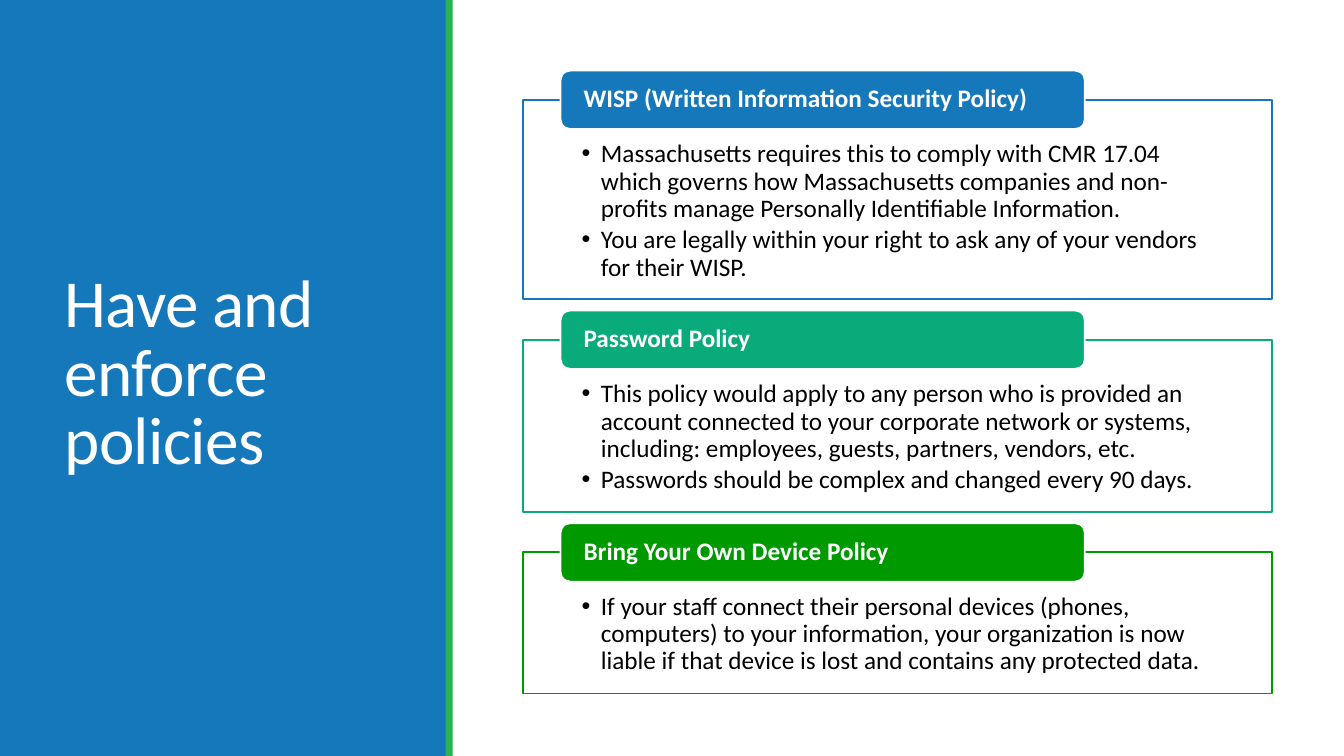
from dataclasses import dataclass

from lxml import etree
from pptx import Presentation
from pptx.dml.color import RGBColor
from pptx.enum.shapes import MSO_SHAPE
from pptx.enum.text import MSO_ANCHOR, MSO_AUTO_SIZE, PP_ALIGN
from pptx.oxml.ns import qn
from pptx.shapes.autoshape import Shape
from pptx.slide import Slide
from pptx.text.text import TextFrame
from pptx.util import Inches, Pt

RECTANGLE = MSO_SHAPE.RECTANGLE
ROUNDED = MSO_SHAPE.ROUNDED_RECTANGLE
TOP, MIDDLE = MSO_ANCHOR.TOP, MSO_ANCHOR.MIDDLE
LEFT = PP_ALIGN.LEFT
NO_AUTOFIT = MSO_AUTO_SIZE.NONE

BLUE = RGBColor(0x15, 0x78, 0xBB)
LIME = RGBColor(0x27, 0xB3, 0x50)
TEAL = RGBColor(0x09, 0xAB, 0x7B)
GREEN = RGBColor(0x00, 0x99, 0x00)
WHITE = RGBColor(0xFF, 0xFF, 0xFF)
BLACK = RGBColor(0x00, 0x00, 0x00)
FONT = "Calibri"

# Lengths in inches
SLIDE_WIDTH, SLIDE_HEIGHT = 13.33, 7.5
CARD_LEFT, CARD_WIDTH = 5.19, 7.43
FIRST_CARD_TOP, CARD_GAP = 0.99, 0.4
TAB_LEFT, TAB_WIDTH, TAB_HEIGHT = 5.56, 5.2, 0.58
BULLET_INDENT = 0.19


@dataclass(frozen=True)
class Policy:
    name: str
    color: RGBColor
    height: float
    points: tuple[str, ...]


POLICIES = (
    Policy("WISP (Written Information Security Policy)", BLUE, 1.98, (
        "Massachusetts requires this to comply with CMR 17.04 which governs how "
        "Massachusetts companies and non-profits manage Personally Identifiable "
        "Information.",
        "You are legally within your right to ask any of your vendors for their WISP.",
    )),
    Policy("Password Policy", TEAL, 1.71, (
        "This policy would apply to any person who is provided an account connected "
        "to your corporate network or systems, including: employees, guests, "
        "partners, vendors, etc.",
        "Passwords should be complex and changed every 90 days.",
    )),
    Policy("Bring Your Own Device Policy", GREEN, 1.4, (
        "If your staff connect their personal devices (phones, computers) to your "
        "information, your organization is now liable if that device is lost and "
        "contains any protected data.",
    )),
)


def add_box(page: Slide, kind: MSO_SHAPE, left: float, top: float, width: float,
            height: float, fill: RGBColor, line: RGBColor | None = None) -> Shape:
    box = page.shapes.add_shape(
        kind, Inches(left), Inches(top), Inches(width), Inches(height))
    box.shadow.inherit = False
    box.fill.solid()
    box.fill.fore_color.rgb = fill
    if line is None:
        box.line.fill.background()
    else:
        box.line.color.rgb = line
        box.line.width = Pt(1.25)
    return box


def set_frame(frame: TextFrame, anchor: MSO_ANCHOR, side: float,
              top: float, bottom: float) -> None:
    frame.word_wrap = True
    frame.auto_size = NO_AUTOFIT
    frame.vertical_anchor = anchor
    frame.margin_left = frame.margin_right = Inches(side)
    frame.margin_top, frame.margin_bottom = Inches(top), Inches(bottom)


def write_lines(frame: TextFrame, lines: tuple[str, ...], size: float,
                color: RGBColor, spacing: float = 0.9, bold: bool = False,
                bulleted: bool = False) -> None:
    frame.text = "\n".join(lines)
    for para in frame.paragraphs:
        para.alignment = LEFT
        para.line_spacing = spacing
        if bulleted:
            para.space_after = Pt(3)
            properties = para._p.get_or_add_pPr()
            properties.set("marL", str(Inches(BULLET_INDENT)))
            properties.set("indent", str(-Inches(BULLET_INDENT)))
            etree.SubElement(properties, qn("a:buFont"), typeface="Arial")
            etree.SubElement(properties, qn("a:buChar"), char="•")
        para.font.name = FONT
        para.font.size = Pt(size)
        para.font.bold = bold
        para.font.color.rgb = color


def add_title(page: Slide) -> None:
    title = page.shapes.title
    title.left, title.top = Inches(0.54), Inches(0.57)
    title.width, title.height = Inches(3.37), Inches(6.31)
    set_frame(title.text_frame, MIDDLE, 0.1, 0.05, 0.05)
    write_lines(title.text_frame, ("Have and enforce policies",), 48, WHITE, 0.85)
    # Tighten the letters by half a point
    for span in title.text_frame.paragraphs[0].runs:
        span._r.get_or_add_rPr().set("spc", "-50")


def add_policy(page: Slide, policy: Policy, top: float) -> None:
    card = add_box(page, RECTANGLE, CARD_LEFT, top, CARD_WIDTH, policy.height,
                   WHITE, policy.color)
    set_frame(card.text_frame, TOP, 0.58, 0.41, 0.14)
    write_lines(card.text_frame, policy.points, 18, BLACK, bulleted=True)

    # The tab is centred on the card's upper edge
    tab = add_box(page, ROUNDED, TAB_LEFT, top - TAB_HEIGHT / 2, TAB_WIDTH,
                  TAB_HEIGHT, policy.color, WHITE)
    set_frame(tab.text_frame, MIDDLE, 0.2, 0, 0)
    write_lines(tab.text_frame, (policy.name,), 18, WHITE, bold=True)


def main() -> None:
    deck = Presentation()
    deck.slide_width, deck.slide_height = Inches(SLIDE_WIDTH), Inches(SLIDE_HEIGHT)
    page = deck.slides.add_slide(deck.slide_layouts.get_by_name("Title Only"))

    # Title panel, placed behind the title, and its edge
    panel = add_box(page, RECTANGLE, 0, 0, 4.43, SLIDE_HEIGHT, BLUE)
    page.shapes.title.element.addprevious(panel.element)
    add_title(page)
    add_box(page, RECTANGLE, 4.42, 0, 0.07, SLIDE_HEIGHT, LIME)

    # Policy cards
    top = FIRST_CARD_TOP
    for policy in POLICIES:
        add_policy(page, policy, top)
        top += policy.height + CARD_GAP

    deck.save("out.pptx")


if __name__ == "__main__":
    main()
